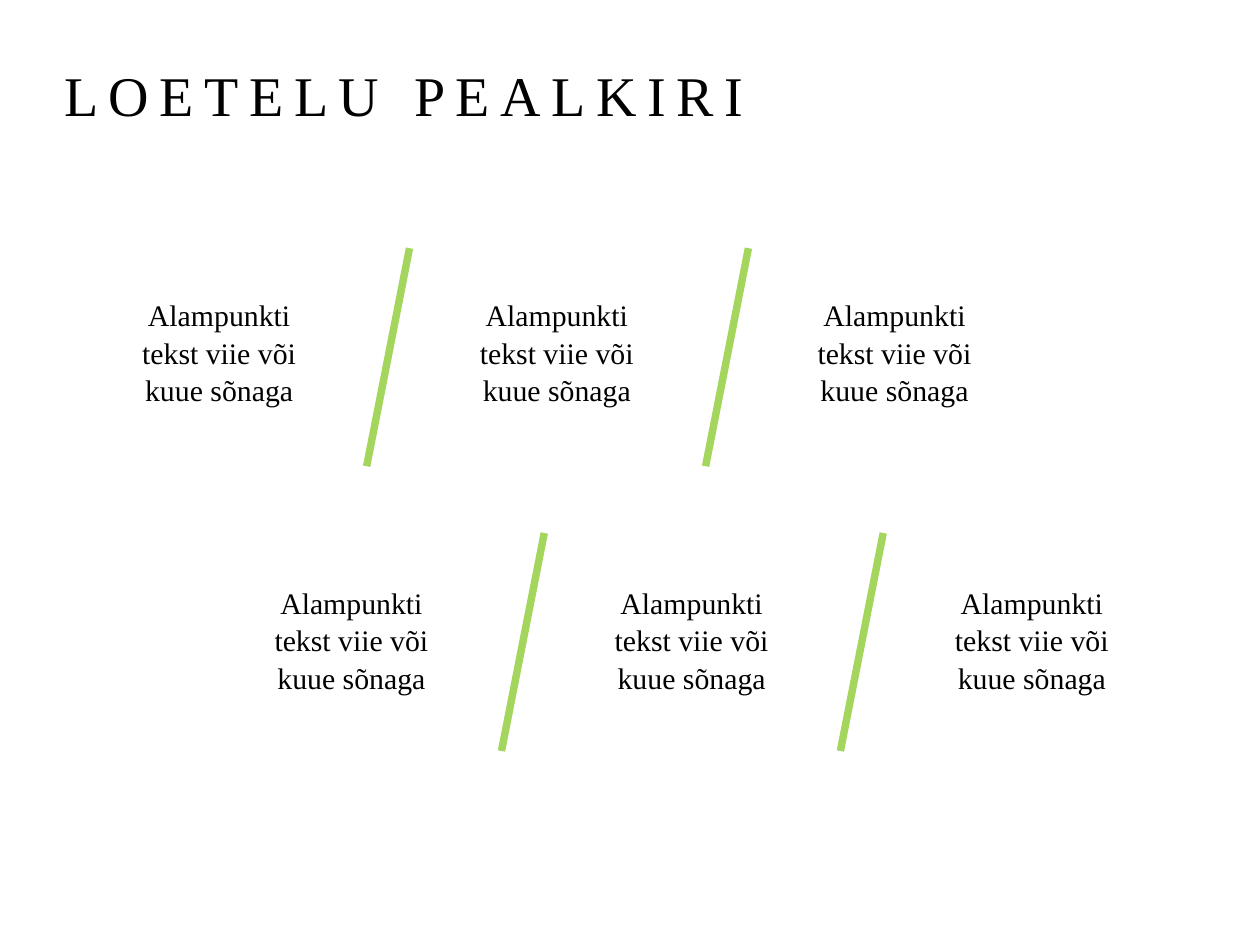
"""Build a slide with a title and two staggered rows of subpoints parted by slanted lines."""
from dataclasses import dataclass

from lxml import etree
from pptx import Presentation
from pptx.dml.color import RGBColor
from pptx.enum.shapes import MSO_CONNECTOR
from pptx.enum.text import MSO_ANCHOR, MSO_AUTO_SIZE, PP_ALIGN
from pptx.oxml.ns import qn
from pptx.slide import Slide
from pptx.text.text import Font
from pptx.util import Inches, Pt

STRAIGHT = MSO_CONNECTOR.STRAIGHT
MIDDLE, BOTTOM = MSO_ANCHOR.MIDDLE, MSO_ANCHOR.BOTTOM
LEFT, CENTER = PP_ALIGN.LEFT, PP_ALIGN.CENTER
FIT_SHAPE, NO_FIT = MSO_AUTO_SIZE.SHAPE_TO_FIT_TEXT, MSO_AUTO_SIZE.NONE

GREEN = RGBColor(0xA4, 0xD6, 0x5E)
BLACK = RGBColor(0x00, 0x00, 0x00)
FONT_NAME = "Times New Roman"
TITLE = "LOETELU PEALKIRI"
SUBPOINT_LINES = ("Alampunkti", "tekst viie või", "kuue sõnaga")

SLIDE_WIDTH, SLIDE_HEIGHT = 10, 7.5
COLUMNS = 3
TEXT_WIDTH, TEXT_HEIGHT = 1.64, 0.96
LINE_PITCH, LINE_RUN, LINE_RISE = 2.69, 0.34, 1.73


@dataclass(frozen=True)
class SubpointRow:
    """Grid origin and column pitch of one row, in inches."""
    text_left: float
    text_top: float
    text_pitch: float
    line_left: float
    line_top: float


ROWS = (
    SubpointRow(0.92, 2.31, 2.68, 2.91, 1.97),
    SubpointRow(1.97, 4.59, 2.7, 3.98, 4.23),
)


def style_font(font: Font, size: float) -> None:
    """Apply the slide's typeface and colour."""
    font.name = FONT_NAME
    font.size = Pt(size)
    font.color.rgb = BLACK


def format_title(slide: Slide) -> None:
    """Place and fill the title placeholder."""
    title = slide.shapes.title
    title.left, title.top = Inches(0.41), Inches(-0.18)
    title.width, title.height = Inches(9.15), Inches(1.24)
    frame = title.text_frame
    frame.text = TITLE
    frame.vertical_anchor = BOTTOM
    frame.auto_size = NO_FIT
    paragraph = frame.paragraphs[0]
    paragraph.alignment = LEFT
    style_font(paragraph.font, 32)
    paragraph.runs[0].font._element.set("spc", "600")


def add_separator(slide: Slide, left: float, top: float) -> None:
    """Draw one slanted line, rising to the right."""
    line = slide.shapes.add_connector(
        STRAIGHT, Inches(left + LINE_RUN), Inches(top),
        Inches(left), Inches(top + LINE_RISE))
    line.line.color.rgb = GREEN
    line.line.width = Pt(4.25)
    etree.SubElement(line._element.spPr, qn("a:effectLst"))


def add_subpoint(slide: Slide, left: float, top: float) -> None:
    """Write one centred subpoint."""
    box = slide.shapes.add_textbox(
        Inches(left), Inches(top), Inches(TEXT_WIDTH), Inches(TEXT_HEIGHT))
    frame = box.text_frame
    frame.text = "\n".join(SUBPOINT_LINES)
    frame.word_wrap = True
    frame.auto_size = FIT_SHAPE
    frame.vertical_anchor = MIDDLE
    for paragraph in frame.paragraphs:
        paragraph.alignment = CENTER
        paragraph.line_spacing = 1.05
        style_font(paragraph.font, 17)


def main() -> None:
    """Create and save the presentation."""
    presentation = Presentation()
    presentation.slide_width = Inches(SLIDE_WIDTH)
    presentation.slide_height = Inches(SLIDE_HEIGHT)
    slide = presentation.slides.add_slide(presentation.slide_layouts.get_by_name("Title Only"))
    format_title(slide)
    for row in ROWS:
        for column in range(COLUMNS - 1):
            add_separator(slide, row.line_left + column * LINE_PITCH, row.line_top)
        for column in range(COLUMNS):
            add_subpoint(slide, row.text_left + column * row.text_pitch, row.text_top)
    presentation.save("out.pptx")


if __name__ == "__main__":
    main()
